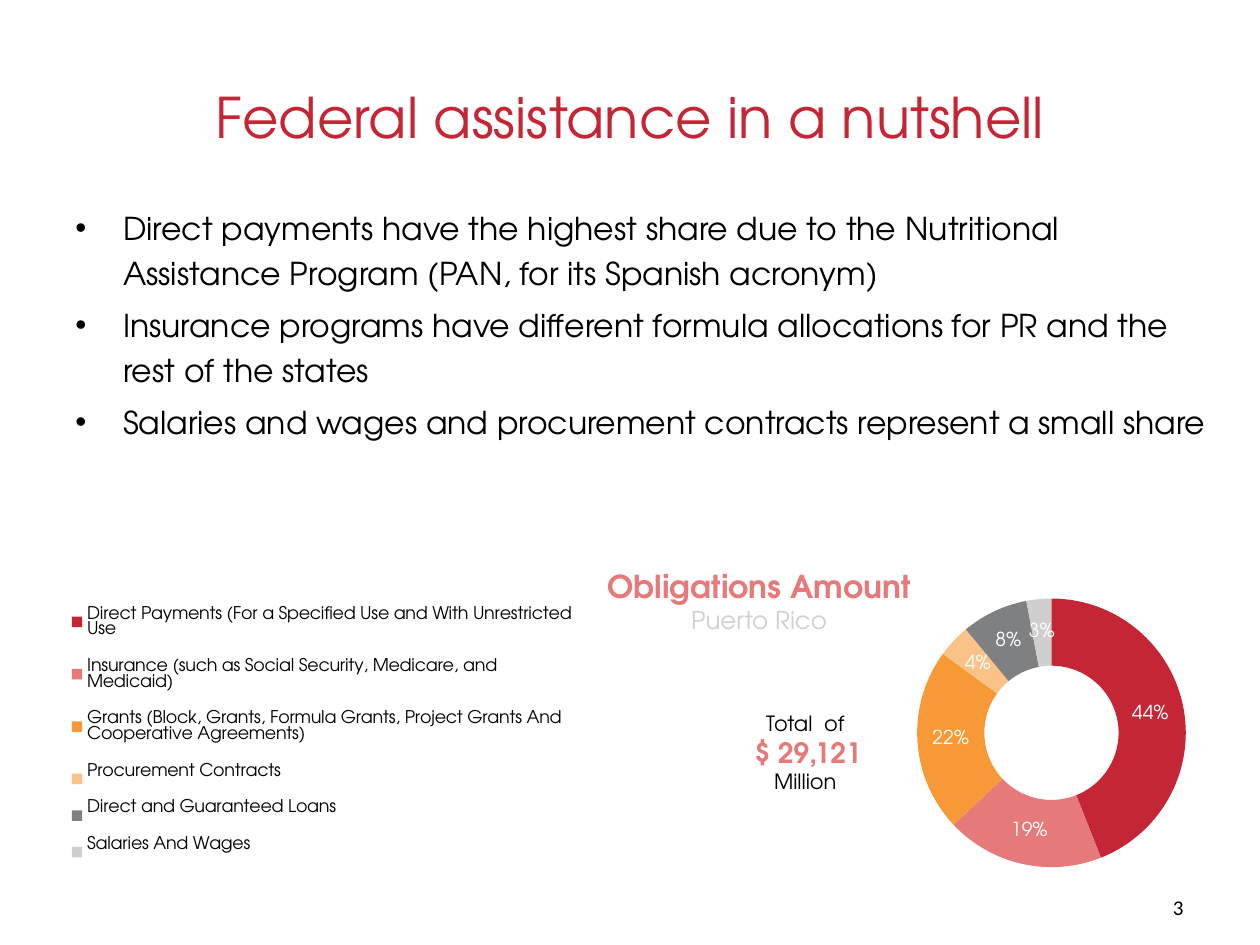
from dataclasses import dataclass
from lxml.etree import SubElement
from pptx import Presentation
from pptx.chart.data import CategoryChartData
from pptx.dml.color import RGBColor
from pptx.enum.chart import XL_CHART_TYPE as ChartType, XL_LEGEND_POSITION as LegendPosition
from pptx.enum.shapes import MSO_SHAPE as Preset
from pptx.enum.text import MSO_ANCHOR as Anchor, PP_ALIGN as Align
from pptx.oxml import parse_xml
from pptx.oxml.ns import nsdecls, qn
from pptx.util import Emu, Pt

PX = 9144


@dataclass(frozen=True)
class Theme:
    font: str = "TeX Gyre Adventor"
    number_font: str = "Calibri"
    red: str = "C52636"
    rose: str = "E67A7A"
    orange: str = "F89938"
    peach: str = "FBC288"
    gray: str = "7E8082"
    silver: str = "CFCFCF"
    black: str = "000000"
    white: str = "FFFFFF"
    title: int = 32
    heading: int = 18
    amount: int = 16
    subheading: int = 14
    small: int = 12
    label: int = 11
    legend: int = 10


THEME = Theme()

BULLETS = [
    "Direct payments have the highest share due to the Nutritional Assistance Program "
    "(PAN, for its Spanish acronym)",
    "Insurance programs have different formula allocations for PR and the rest of the states",
    "Salaries and wages and procurement contracts represent a small share",
]
SHARES = [
    ("Direct Payments (For a Specified Use and With Unrestricted Use", 44, THEME.red),
    ("Insurance (such as Social Security, Medicare, and Medicaid)", 19, THEME.rose),
    ("Grants (Block, Grants, Formula Grants, Project Grants And Cooperative Agreements)",
     22, THEME.orange),
    ("Procurement Contracts", 4, THEME.peach),
    ("Direct and Guaranteed Loans", 8, THEME.gray),
    ("Salaries And Wages", 3, THEME.silver),
]


def scale(box):
    return [Emu(length * PX) for length in box]


def style(font, size, color, bold=False, name=THEME.font):
    font.name, font.size, font.bold = name, Pt(size), bold
    font.color.rgb = RGBColor.from_string(color)


def write_lines(frame, lines, align=Align.CENTER, name=THEME.font):
    for index, (text, size, color, bold) in enumerate(lines):
        paragraph = frame.paragraphs[0] if index == 0 else frame.add_paragraph()
        paragraph.text, paragraph.alignment = text, align
        style(paragraph.font, size, color, bold, name)


def add_text(slide, box, lines, wrap=True, **options):
    frame = slide.shapes.add_textbox(*scale(box)).text_frame
    frame.word_wrap = wrap
    write_lines(frame, lines, **options)
    return frame


def place_title(slide, box, text):
    title = slide.shapes.title
    title.left, title.top, title.width, title.height = scale(box)
    title.text_frame.vertical_anchor = Anchor.MIDDLE
    write_lines(title.text_frame, [(text, THEME.title, THEME.red, False)])


def add_bullets(slide, box, texts):
    lines = [(text, THEME.heading, THEME.black, False) for text in texts]
    indent = 38 * PX
    for paragraph in add_text(slide, box, lines, align=Align.LEFT).paragraphs:
        paragraph.line_spacing = 1.2
        paragraph.space_before = Pt(3.6)
        properties = paragraph._p.get_or_add_pPr()
        properties.set("marL", str(indent))
        properties.set("indent", str(-indent))
        SubElement(properties, qn("a:buFont"), typeface="Arial")
        SubElement(properties, qn("a:buChar"), char="•")


def make_layout(x, y, width, height, inner=False):
    target = '<c:layoutTarget val="inner"/>' if inner else ""
    return parse_xml(
        f'<c:layout {nsdecls("c")}><c:manualLayout>{target}'
        '<c:xMode val="edge"/><c:yMode val="edge"/>'
        f'<c:x val="{x}"/><c:y val="{y}"/><c:w val="{width}"/><c:h val="{height}"/>'
        "</c:manualLayout></c:layout>")


def replace_layout(parent, layout, position):
    for old in parent.findall(qn("c:layout")):
        parent.remove(old)
    parent.insert(position, layout)


def add_doughnut(slide, box, shares):
    data = CategoryChartData()
    data.categories = [name for name, _, _ in shares]
    data.add_series("Series 1", [value for _, value, _ in shares])
    chart = slide.shapes.add_chart(ChartType.DOUGHNUT, *scale(box), data).chart
    chart.has_title = False
    style(chart.font, THEME.legend, THEME.black)
    chart.has_legend = True
    chart.legend.position = LegendPosition.LEFT
    chart.legend.include_in_layout = False
    style(chart.legend.font, THEME.legend, THEME.black)

    plot = chart.plots[0]
    plot.vary_by_categories = True
    plot._element.find(qn("c:holeSize")).set("val", "50")
    for index, (_, _, color) in enumerate(shares):
        fill = plot.series[0].points[index].format.fill
        fill.solid()
        fill.fore_color.rgb = RGBColor.from_string(color)
    plot.has_data_labels = True
    labels = plot.data_labels
    labels.show_percentage, labels.show_value = True, False
    labels.number_format, labels.number_format_is_linked = "0%", False
    style(labels.font, THEME.label, THEME.white)

    replace_layout(chart.legend._element, make_layout(0.01, 0.07, 0.44, 0.78), 1)
    space = chart._chartSpace
    replace_layout(space.chart.plotArea, make_layout(0.74, 0.08, 0.23, 0.78, True), 0)
    space.chart.addnext(parse_xml(
        f'<c:spPr {nsdecls("c", "a")}><a:noFill/><a:ln><a:noFill/></a:ln></c:spPr>'))


def add_total(slide, box, lines):
    shape = slide.shapes.add_shape(Preset.OVAL, *scale(box))
    shape.shadow.inherit = False
    shape.fill.background()
    shape.line.fill.background()
    frame = shape.text_frame
    frame.margin_left = frame.margin_right = frame.margin_top = frame.margin_bottom = 0
    frame.vertical_anchor = Anchor.MIDDLE
    write_lines(frame, lines)


def add_obligations(slide, box):
    left, top, width, height = box
    add_text(slide, (left + 429, top + 1, 263, 64), [
        ("Obligations Amount", THEME.heading, THEME.rose, True),
        ("Puerto Rico", THEME.subheading, THEME.silver, False)], wrap=False)
    add_doughnut(slide, box, SHARES)
    add_total(slide, (left + 519, top + 87, 161, 132), [
        ("Total  of ", THEME.small, THEME.black, False),
        ("$ 29,121", THEME.amount, THEME.rose, True),
        ("Million ", THEME.small, THEME.black, False)])


def main():
    presentation = Presentation()
    presentation.slide_width, presentation.slide_height = scale((1000, 750))
    slide = presentation.slides.add_slide(presentation.slide_layouts[5])
    place_title(slide, (50, 30, 900, 125), "Federal assistance in a nutshell")
    add_obligations(slide, (42, 444, 927, 293))
    add_bullets(slide, (50, 155, 917, 287), BULLETS)
    add_text(slide, (921, 705, 58, 30), [("3", THEME.small, THEME.black, False)],
             align=Align.LEFT, name=THEME.number_font)
    presentation.save("out.pptx")


if __name__ == "__main__":
    main()
